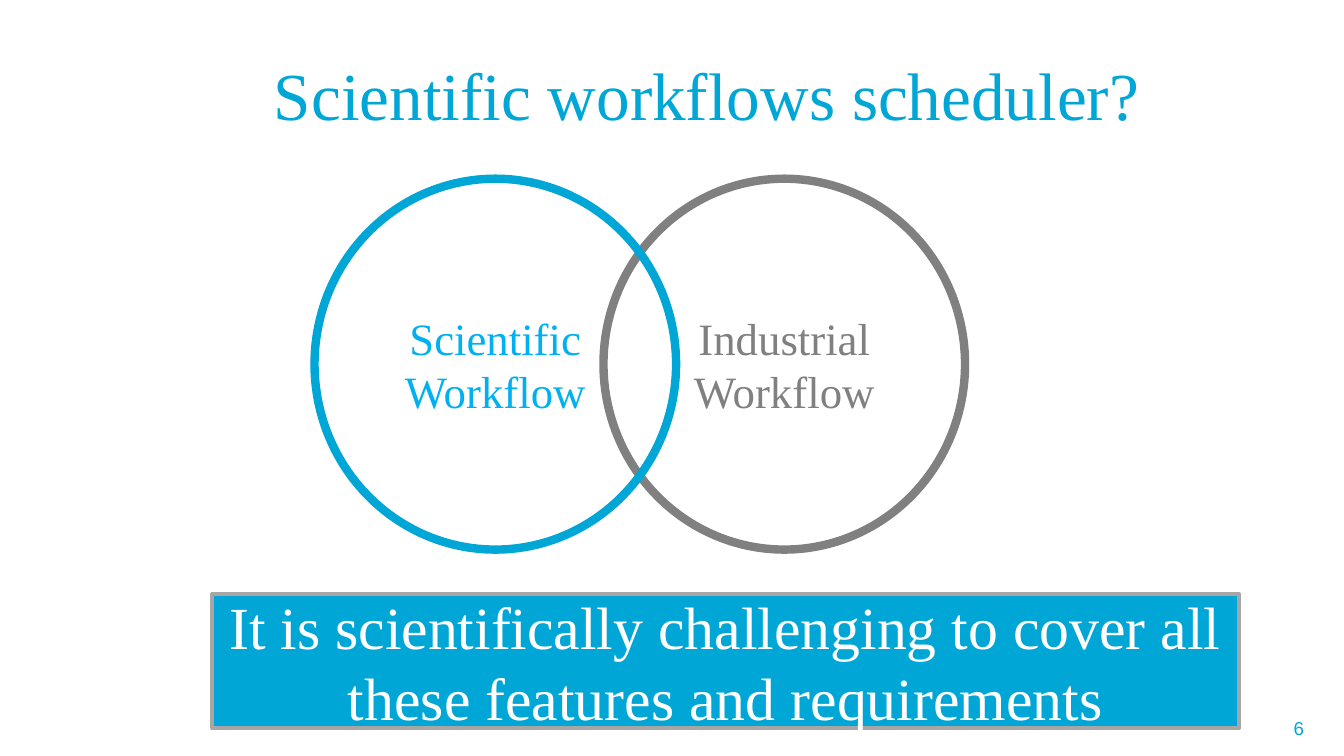
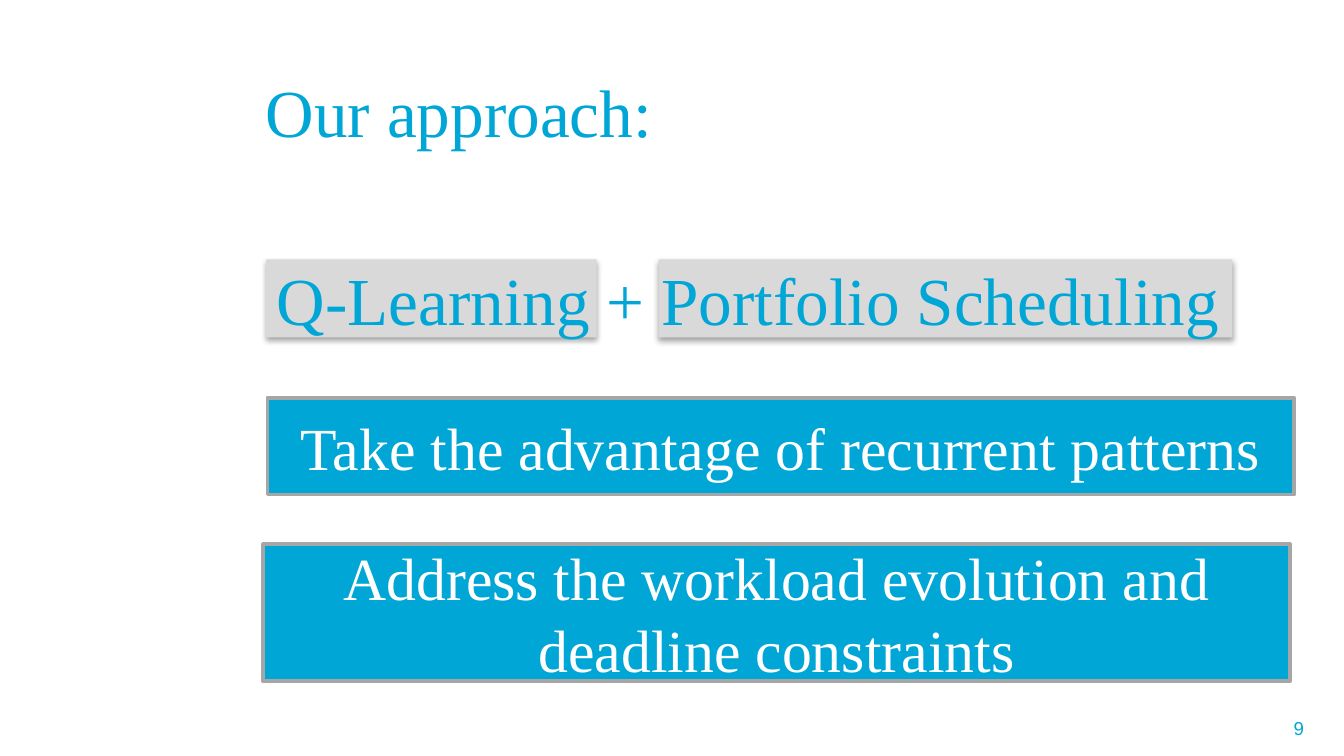
import pptx
import pptx.dml.color
import pptx.enum.shapes
import pptx.enum.text
import pptx.oxml
import pptx.oxml.ns
import pptx.util

RGBColor = pptx.dml.color.RGBColor
SHAPE = pptx.enum.shapes.MSO_SHAPE
ALIGN = pptx.enum.text.PP_ALIGN

CYAN = RGBColor(0x00, 0xA6, 0xD6)
SKY = RGBColor(0x00, 0xB0, 0xF0)
GRAY = RGBColor(0x80, 0x80, 0x80)
BORDER = RGBColor(0xA6, 0xA6, 0xA6)
PALE = RGBColor(0xD9, 0xD9, 0xD9)
WHITE = RGBColor(0xFF, 0xFF, 0xFF)

SERIF = "Times New Roman"
SANS = "Arial"

# The grid has square cells on a 16:9 slide: 100 columns by 56.25 rows.
CELL = pptx.util.Inches(0.1)
COLUMNS, ROWS = 100, 56.25
TITLE_HEIGHT = 9.4
BANNER_WIDTH = 76.4
CIRCLE_WIDTH, CIRCLE_HEIGHT = 26.9, 27.6
CIRCLE_LEFT, CIRCLE_TOP, CIRCLE_STEP = 23.4, 13.3, 21.5
HIGHLIGHT_TOP, HIGHLIGHT_HEIGHT = 19.3, 5.8


def cells(*counts):
    """Turn grid counts into slide lengths."""
    return [round(count * CELL) for count in counts]


def write(shape, text, size, color, font=SERIF, align=ALIGN.LEFT):
    """Fill a shape with vertically centred text, one paragraph per line."""
    frame = shape.text_frame
    frame.word_wrap = True
    frame.vertical_anchor = pptx.enum.text.MSO_ANCHOR.MIDDLE
    frame.text = text
    for para in frame.paragraphs:
        para.alignment = align
        for span in para.runs:
            span.font.name = font
            span.font.size = pptx.util.Pt(size)
            span.font.color.rgb = color


def add_text(page, area, text, **text_format):
    box = page.shapes.add_textbox(*cells(*area))
    write(box, text, **text_format)


def add_title(page, left, top, text, width=77.5):
    add_text(page, (left, top, width, TITLE_HEIGHT), text, size=36, color=CYAN)


def add_figure(page, kind, area, fill=None, line=None, line_width=1):
    figure = page.shapes.add_shape(kind, *cells(*area))
    figure.shadow.inherit = False
    if fill is None:
        figure.fill.background()
    else:
        figure.fill.solid()
        figure.fill.fore_color.rgb = fill
    if line is None:
        figure.line.fill.background()
    else:
        figure.line.color.rgb = line
        figure.line.width = pptx.util.Pt(line_width)
    return figure


def add_banner(page, left, top, height, text):
    banner = add_figure(page, SHAPE.RECTANGLE, (left, top, BANNER_WIDTH, height),
                        fill=CYAN, line=BORDER, line_width=2)
    write(banner, text, size=32, color=WHITE, align=ALIGN.CENTER)


def add_circle(page, position, text, line, text_color):
    left = CIRCLE_LEFT + position * CIRCLE_STEP
    circle = add_figure(page, SHAPE.OVAL,
                        (left, CIRCLE_TOP, CIRCLE_WIDTH, CIRCLE_HEIGHT),
                        line=line, line_width=4.5)
    write(circle, text, size=24, color=text_color, align=ALIGN.CENTER)


def add_highlight(page, left, width):
    """Add a pale block with a soft shadow, to lie behind words of a title."""
    block = add_figure(page, SHAPE.RECTANGLE,
                       (left, HIGHLIGHT_TOP, width, HIGHLIGHT_HEIGHT), fill=PALE)
    effects = block._element.spPr.find(pptx.oxml.ns.qn("a:effectLst"))
    blur, distance = pptx.util.Pt(3.1), pptx.util.Pt(1.8)
    effects.append(pptx.oxml.parse_xml(
        f'<a:outerShdw {pptx.oxml.ns.nsdecls("a")} blurRad="{blur}" '
        f'dist="{distance}" dir="5400000" rotWithShape="0">'
        '<a:srgbClr val="000000"><a:alpha val="35000"/></a:srgbClr></a:outerShdw>'))


def add_page(deck, number):
    page = deck.slides.add_slide(deck.slide_layouts[6])
    add_text(page, (72.7, 52.7, 25.3, 3), number,
             size=10, color=CYAN, font=SANS, align=ALIGN.RIGHT)
    return page


def build_question(deck):
    page = add_page(deck, "6")
    add_title(page, 19.4, 2.3, "Scientific workflows scheduler?")
    add_banner(page, 15.8, 44.2, 10,
               "It is scientifically challenging to cover all these features "
               "and requirements")
    add_circle(page, 1, "Industrial\nWorkflow", GRAY, GRAY)
    add_circle(page, 0, "Scientific Workflow", CYAN, SKY)


def build_approach(deck):
    page = add_page(deck, "9")
    add_highlight(page, 49, 42.7)
    add_highlight(page, 19.8, 24.6)
    add_title(page, 19.6, 17.5, "Q-Learning + Portfolio Scheduling")
    add_banner(page, 19.9, 29.6, 7.2, "Take the advantage of recurrent patterns")
    add_banner(page, 19.6, 40.5, 10.2,
               "Address the workload evolution and deadline constraints")
    add_title(page, 18.8, 3.5, "Our approach:", width=77.7)


def main():
    deck = pptx.Presentation()
    deck.slide_width, deck.slide_height = cells(COLUMNS, ROWS)
    build_question(deck)
    build_approach(deck)
    deck.save("out.pptx")


if __name__ == "__main__":
    main()
